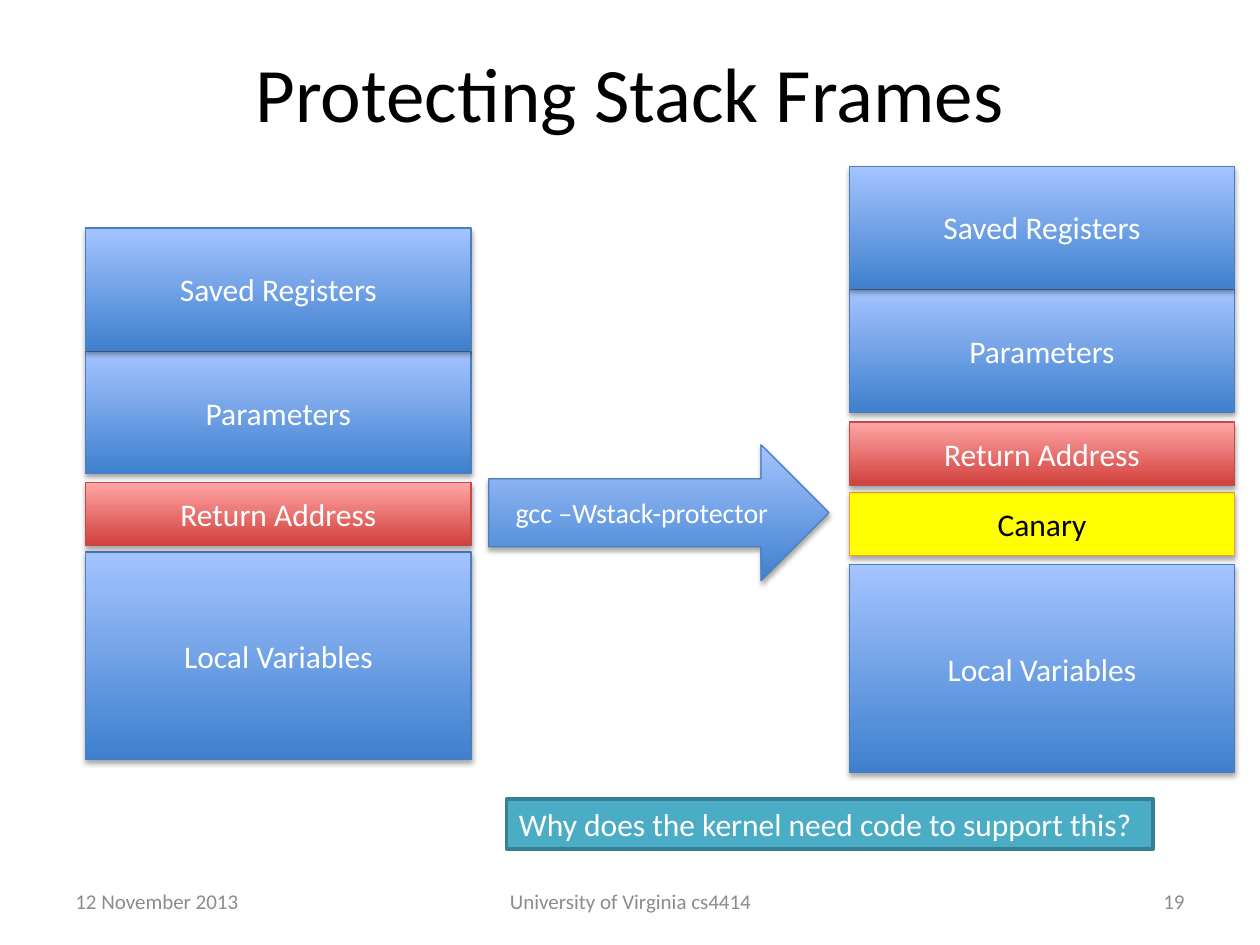
from lxml import etree
from pptx import Presentation
from pptx.dml.color import RGBColor
from pptx.enum.shapes import MSO_SHAPE
from pptx.enum.text import MSO_ANCHOR, PP_ALIGN
from pptx.oxml.ns import qn
from pptx.util import Inches, Pt

RECTANGLE, ARROW = MSO_SHAPE.RECTANGLE, MSO_SHAPE.RIGHT_ARROW
LEFT, CENTER, RIGHT = PP_ALIGN.LEFT, PP_ALIGN.CENTER, PP_ALIGN.RIGHT
MIDDLE, TOP = MSO_ANCHOR.MIDDLE, MSO_ANCHOR.TOP

COLORS = {
    "black": "000000", "white": "FFFFFF", "gray": "8C8C8C",
    "blue_dark": "3F80CE", "blue_light": "A4C4FF", "blue_line": "4B7EBC",
    "red_dark": "D1403C", "red_light": "FFA6A5", "red_line": "BF4C48",
    "yellow": "FFFF00", "orange": "F79646",
    "teal": "4BACC6", "teal_line": "377F92",
}
# Fill colours run from bottom to top; a single one is a solid fill.
LOOKS = {
    "blue": {"fill": ["blue_dark", "blue_light"], "line": "blue_line", "text": "white"},
    "red": {"fill": ["red_dark", "red_light"], "line": "red_line", "text": "white"},
    "yellow": {"fill": ["yellow"], "line": "orange", "text": "black"},
    "teal": {"fill": ["teal"], "line": "teal_line", "text": "white"},
}
LOCAL_VARIABLES = ("Local Variables", 1.65, "blue")
RETURN_ADDRESS = ("Return Address", 0.5, "red")
PARAMETERS = ("Parameters", 0.97, "blue")
SAVED_REGISTERS = ("Saved Registers", 0.97, "blue")
CANARY = ("Canary", 0.5, "yellow")
FRAME_WIDTH = 3.06


def color(name):
    return RGBColor.from_string(COLORS[name])


class SlideBuilder:
    def __init__(self, slide, font="Calibri"):
        self.slide = slide
        self.font = font

    def fill_text(self, shape, text, size, text_color, align=CENTER, anchor=MIDDLE, wrap=True):
        frame = shape.text_frame
        frame.word_wrap = wrap
        frame.vertical_anchor = anchor
        paragraph = frame.paragraphs[0]
        paragraph.alignment = align
        run = paragraph.add_run()
        run.text = text
        for name, value in {"name": self.font, "size": Pt(size)}.items():
            setattr(run.font, name, value)
        run.font.color.rgb = color(text_color)

    def label(self, box, text, size, text_color, align=CENTER):
        shape = self.slide.shapes.add_textbox(*map(Inches, box))
        self.fill_text(shape, text, size, text_color, align)

    def block(self, box, text, look, kind=RECTANGLE, size=18, line_width=0.75,
              shadow=True, **layout):
        style = LOOKS[look]
        shape = self.slide.shapes.add_shape(kind, *map(Inches, box))
        if len(style["fill"]) == 1:
            shape.fill.solid()
            shape.fill.fore_color.rgb = color(style["fill"][0])
        else:
            shape.fill.gradient()
            shape.fill.gradient_angle = 90
            for stop, name in zip(shape.fill.gradient_stops, style["fill"]):
                stop.color.rgb = color(name)
        shape.line.color.rgb = color(style["line"])
        shape.line.width = Pt(line_width)
        shape.shadow.inherit = False
        if shadow:
            self.drop_shadow(shape)
        self.fill_text(shape, text, size, style["text"], **layout)

    def drop_shadow(self, shape):
        effects = shape.element.spPr.find(qn("a:effectLst"))
        outer = etree.SubElement(effects, qn("a:outerShdw"), blurRad=str(Pt(3.1)),
                                 dist=str(Pt(1.8)), dir="5400000", rotWithShape="0")
        shade = etree.SubElement(outer, qn("a:srgbClr"), val=COLORS["black"])
        etree.SubElement(shade, qn("a:alpha"), val="35000")

    def stack(self, left, bottom, parts):
        """Pile (part, gap below it) pairs upwards, so each shadow falls on the part below."""
        for (name, height, look), gap in parts:
            bottom -= gap + height
            self.block((left, bottom, FRAME_WIDTH, height), name, look)


def main():
    presentation = Presentation()
    presentation.slide_width, presentation.slide_height = Inches(10), Inches(7.5)
    builder = SlideBuilder(presentation.slides.add_slide(presentation.slide_layouts[6]))

    builder.label((0.5, 0.3, 9, 0.85), "Protecting Stack Frames", 44, "black")
    for left, width, text, align in (
        (0.5, 2.33, "12 November 2013", LEFT),
        (3.42, 3.17, "University of Virginia cs4414", CENTER),
        (7.17, 2.33, "19", RIGHT),
    ):
        builder.label((left, 6.95, width, 0.4), text, 12, "gray", align)

    builder.stack(0.68, 6.03, [(LOCAL_VARIABLES, 0), (RETURN_ADDRESS, 0.05),
                               (PARAMETERS, 0.07), (SAVED_REGISTERS, 0.01)])
    builder.block((3.88, 3.53, 2.7, 1.08), "gcc –Wstack-protector", "blue", ARROW, 16)
    builder.stack(6.74, 6.13, [(LOCAL_VARIABLES, 0), (CANARY, 0.07), (RETURN_ADDRESS, 0.06),
                               (PARAMETERS, 0.08), (SAVED_REGISTERS, 0.01)])
    builder.block((4.02, 6.34, 5.13, 0.4), "Why does the kernel need code to support this?",
                  "teal", line_width=2, shadow=False, align=LEFT, anchor=TOP, wrap=False)

    presentation.save("out.pptx")


if __name__ == "__main__":
    main()
